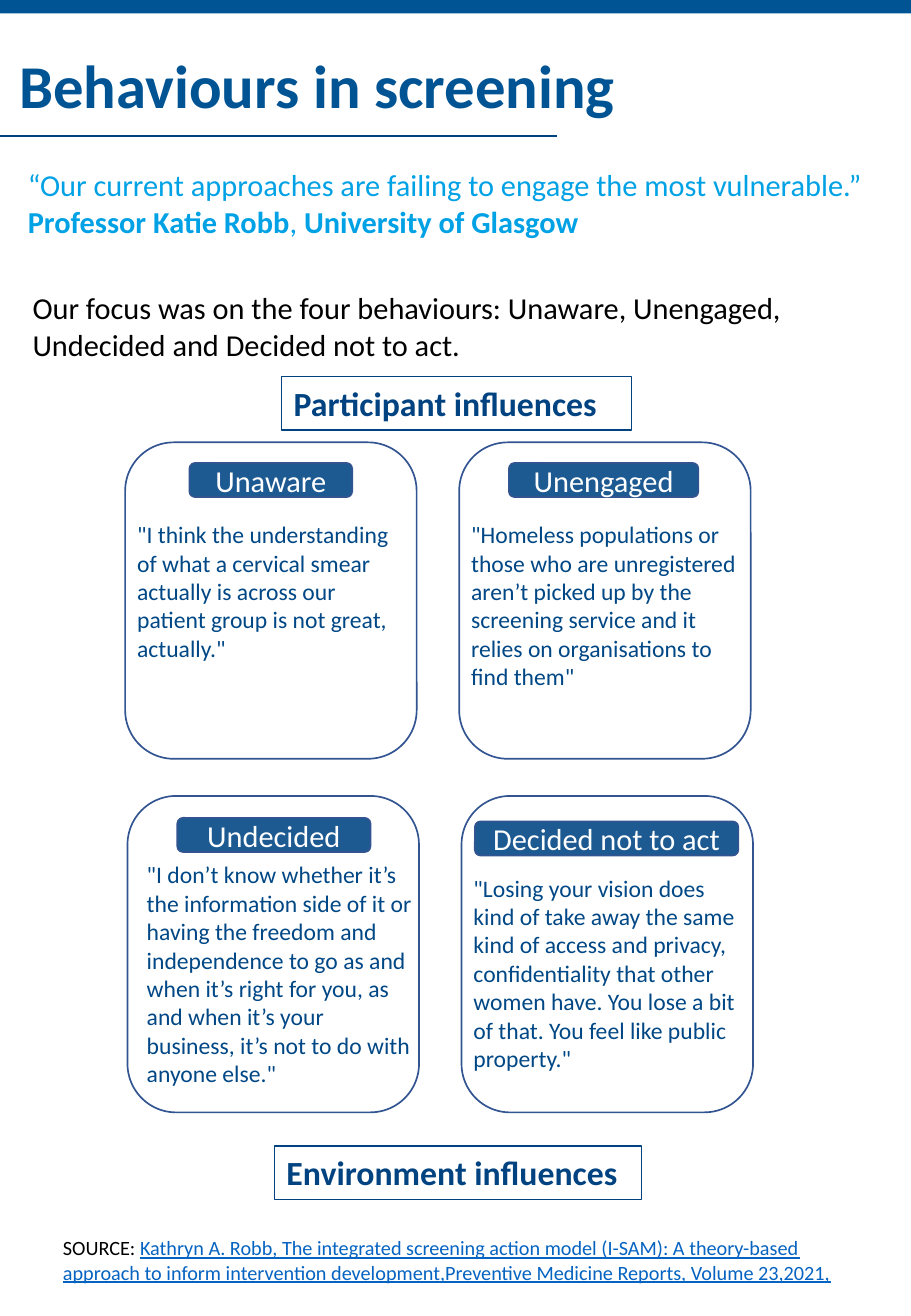
from pptx import Presentation
from pptx.dml.color import RGBColor
from pptx.enum.shapes import MSO_CONNECTOR, MSO_SHAPE
from pptx.enum.text import MSO_ANCHOR, PP_ALIGN
from pptx.oxml.ns import qn
from pptx.util import Pt
from lxml import etree

RECTANGLE, ROUNDED = MSO_SHAPE.RECTANGLE, MSO_SHAPE.ROUNDED_RECTANGLE
TOP, MIDDLE = MSO_ANCHOR.TOP, MSO_ANCHOR.MIDDLE
LEFT, CENTER = PP_ALIGN.LEFT, PP_ALIGN.CENTER

FONT = "Calibri"
WHITE = RGBColor(0xFF, 0xFF, 0xFF)
BLACK = RGBColor(0x00, 0x00, 0x00)
BRAND_BLUE = RGBColor(0x00, 0x54, 0x93)
NAVY = RGBColor(0x00, 0x43, 0x80)
QUOTE_BLUE = RGBColor(0x00, 0x47, 0x85)
SKY_BLUE = RGBColor(0x00, 0xA2, 0xE5)
LABEL_BLUE = RGBColor(0x1D, 0x5A, 0x92)
OUTLINE_BLUE = RGBColor(0x32, 0x54, 0x91)
LINK_BLUE = RGBColor(0x05, 0x63, 0xC1)

presentation = Presentation()
presentation.slide_width, presentation.slide_height = Pt(540), Pt(779.76)
slide = presentation.slides.add_slide(presentation.slide_layouts[5])


def write_text(shape, *paragraphs, size, color, bold=False, align=LEFT, anchor=TOP):
    """Fill a shape; each paragraph is a list of (text, font overrides) runs."""
    frame = shape.text_frame
    frame.word_wrap = True
    frame.vertical_anchor = anchor
    for index, runs in enumerate(paragraphs):
        paragraph = frame.add_paragraph() if index else frame.paragraphs[0]
        paragraph.alignment = align
        for text, overrides in runs:
            run = paragraph.add_run()
            run.text = text
            run.font.name = FONT
            run.font.size = Pt(size)
            run.font.bold = overrides.get("bold", bold)
            run.font.underline = overrides.get("underline", False)
            run.font.color.rgb = overrides.get("color", color)


def add_box(kind, left, top, width, height, fill=WHITE, line=None, line_width=1):
    shape = slide.shapes.add_shape(kind, Pt(left), Pt(top), Pt(width), Pt(height))
    shape.shadow.inherit = False
    shape.fill.solid()
    shape.fill.fore_color.rgb = fill
    if line is None:
        shape.line.fill.background()
    else:
        shape.line.color.rgb = line
        shape.line.width = Pt(line_width)
    return shape


# Header
add_box(RECTANGLE, 0, 0, 540, 8, fill=BRAND_BLUE)

title = slide.shapes.title
title.left, title.top, title.width, title.height = Pt(4.3), Pt(24.5), Pt(507.6), Pt(51.1)
write_text(title, [("Behaviours in screening", {})],
           size=36, color=BRAND_BLUE, bold=True, anchor=MIDDLE)

rule = slide.shapes.add_connector(MSO_CONNECTOR.STRAIGHT, Pt(-6), Pt(80.6), Pt(330), Pt(80.6))
rule.line.color.rgb = NAVY
rule.line.width = Pt(1)
etree.SubElement(rule._element.spPr, qn("a:effectLst"))

# Introduction
opening_quote = slide.shapes.add_textbox(Pt(9.4), Pt(95), Pt(526), Pt(51))
write_text(opening_quote,
           [("“Our current approaches are failing to engage the most vulnerable.”", {})],
           [("Professor Katie Robb", {"bold": True}), (", ", {}),
            ("University of Glasgow", {"bold": True})],
           size=18, color=SKY_BLUE)

focus = slide.shapes.add_textbox(Pt(12.2), Pt(167.8), Pt(469.4), Pt(94.3))
write_text(focus,
           [("Our focus was on the four behaviours: Unaware, Unengaged, "
             "Undecided and Decided not to act.", {})],
           size=18, color=BLACK)

# Behaviour cards: card position, label box (left, top, width), quote position, texts
CARD_WIDTH, CARD_HEIGHT, LABEL_HEIGHT = 172.8, 187.5, 20.2
behaviours = [
    ((74.2, 262.1), (112.3, 274.3, 96.5), (74.2, 304.6), "Unaware",
     '"I think the understanding of what a cervical smear actually is across our '
     'patient group is not great, actually."'),
    ((272.2, 262.1), (301.7, 274.3, 112.3), (272.2, 304.6), "Unengaged",
     '"Homeless populations or those who are unregistered aren’t picked up by the '
     'screening service and it relies on organisations to find them"'),
    ((75.6, 471.6), (105.1, 484.6, 114.5), (79.9, 506.2), "Undecided",
     '"I don’t know whether it’s the information side of it or having the freedom '
     'and independence to go as and when it’s right for you, as and when it’s your '
     'business, it’s not to do with anyone else."'),
    ((273.6, 471.6), (281.5, 486.7, 156.2), (273.6, 514.1), "Decided not to act",
     '"Losing your vision does kind of take away the same kind of access and privacy, '
     'confidentiality that other women have. You lose a bit of that. '
     'You feel like public property."'),
]
for card, label_box, quote_position, name, words in behaviours:
    add_box(ROUNDED, *card, CARD_WIDTH, CARD_HEIGHT, line=OUTLINE_BLUE)
    label = add_box(ROUNDED, *label_box, LABEL_HEIGHT, fill=LABEL_BLUE, line=OUTLINE_BLUE)
    write_text(label, [(name, {})], size=18, color=WHITE, align=CENTER, anchor=MIDDLE)
    quote_left, quote_top = quote_position
    quote = slide.shapes.add_textbox(Pt(quote_left), Pt(quote_top), Pt(CARD_WIDTH), Pt(130))
    write_text(quote, [(words, {})], size=14, color=QUOTE_BLUE)

# Influence headings
for left, top, width, heading in [
    (167, 223.2, 207.4, "Participant influences"),
    (162.7, 679, 217.4, "Environment influences"),
]:
    box = add_box(RECTANGLE, left, top, width, 31.7, line=NAVY, line_width=0.75)
    write_text(box, [(heading, {})], size=20, color=NAVY, bold=True)

# Source
source = add_box(RECTANGLE, 30.2, 728.6, 480, 36.3)
write_text(source,
           [("SOURCE: ", {}),
            ("Kathryn A. Robb, The integrated screening action model (I-SAM): A theory-based "
             "approach to inform intervention development,Preventive Medicine Reports, "
             "Volume 23,2021,", {"color": LINK_BLUE, "underline": True})],
           size=12, color=BLACK)

presentation.save("out.pptx")
